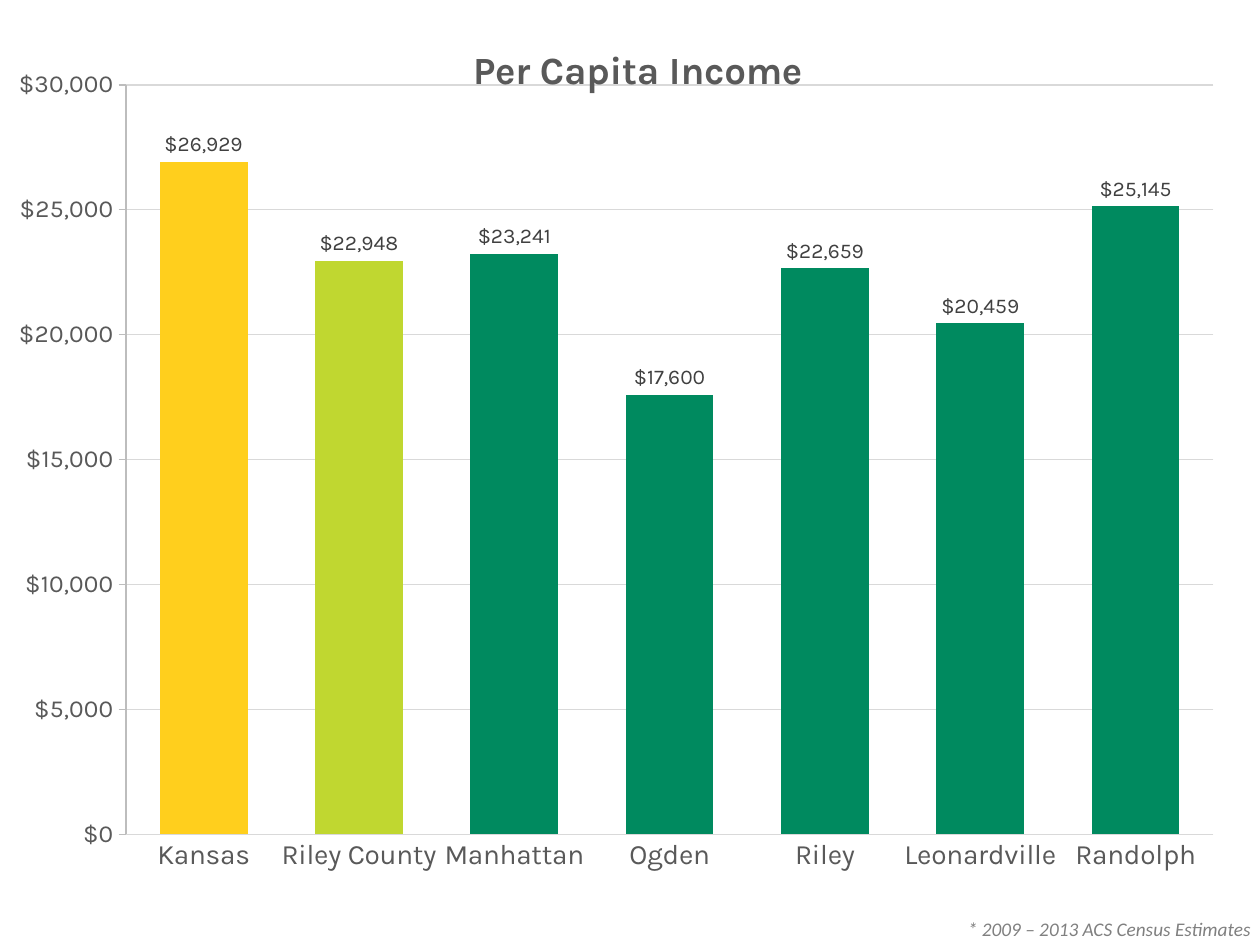
from lxml import etree
from pptx import Presentation
from pptx.chart.data import CategoryChartData
from pptx.dml.color import RGBColor
from pptx.enum.chart import XL_CHART_TYPE, XL_LABEL_POSITION, XL_TICK_MARK
from pptx.enum.text import MSO_ANCHOR, PP_ALIGN
from pptx.oxml.ns import qn
from pptx.util import Inches, Pt

COLUMNS = XL_CHART_TYPE.COLUMN_CLUSTERED
OUTSIDE_END = XL_LABEL_POSITION.OUTSIDE_END
TICK_NONE, TICK_OUT = XL_TICK_MARK.NONE, XL_TICK_MARK.OUTSIDE

YELLOW = RGBColor(0xFF, 0xCF, 0x1D)
LIME = RGBColor(0xC0, 0xD7, 0x30)
GREEN = RGBColor(0x00, 0x8A, 0x5F)
DARK_GREEN = RGBColor(0x06, 0x62, 0x43)
TEXT_GRAY = RGBColor(0x59, 0x59, 0x59)
LABEL_GRAY = RGBColor(0x40, 0x40, 0x40)
NOTE_GRAY = RGBColor(0x80, 0x80, 0x80)
GRID_GRAY = RGBColor(0xD9, 0xD9, 0xD9)
AXIS_GRAY = RGBColor(0xBD, 0xBD, 0xBD)

# Content
TITLE = "Per Capita Income"
INCOMES = [
    ("Kansas", 26929, YELLOW),
    ("Riley County", 22948, LIME),
    ("Manhattan", 23241, GREEN),
    ("Ogden", 17600, GREEN),
    ("Riley", 22659, GREEN),
    ("Leonardville", 20459, GREEN),
    ("Randolph", 25145, GREEN),
]
NOTE = "* 2009 – 2013 ACS Census Estimates"
DOLLARS = '"$"#,##0'

# Formats
TITLE_FONT = dict(name="Karla", size=Pt(22), bold=True, color=TEXT_GRAY)
CATEGORY_FONT = dict(name="Karla", size=Pt(16), color=TEXT_GRAY)
VALUE_FONT = dict(name="Karla", size=Pt(14), color=TEXT_GRAY)
LABEL_FONT = dict(name="Karla", size=Pt(12), color=LABEL_GRAY)
NOTE_FONT = dict(name="Calibri", size=Pt(11), italic=True, color=NOTE_GRAY)

# Shares of the chart's size
TITLE_AT = dict(xMode="edge", yMode="edge", x=0.37, y=0.04)
PLOT_AT = dict(layoutTarget="inner", xMode="edge", yMode="edge",
               x=0.1, y=0.09, w=0.863, h=0.793)


def style(font, formats):
    for key, value in formats.items():
        if key == "color":
            font.color.rgb = value
        else:
            setattr(font, key, value)


def style_line(line, color):
    line.color.rgb = color
    line.width = Pt(0.75)


def place(element, values):
    """Give a chart title or plot area a manual layout."""
    for old in element.findall(qn("c:layout")):
        element.remove(old)
    layout = etree.Element(qn("c:layout"))
    manual = etree.SubElement(layout, qn("c:manualLayout"))
    for tag, value in values.items():
        etree.SubElement(manual, qn("c:" + tag)).set("val", str(value))
    element.insert(0 if element.find(qn("c:tx")) is None else 1, layout)


prs = Presentation()
prs.slide_width, prs.slide_height = Inches(10), Inches(7.5)
s = prs.slides.add_slide(prs.slide_layouts[6])

# Source note
note_w, note_h = Inches(2.42), Inches(0.25)
tf = s.shapes.add_textbox(prs.slide_width - note_w, prs.slide_height - note_h,
                          note_w, note_h).text_frame
tf.word_wrap = True
tf.vertical_anchor = MSO_ANCHOR.MIDDLE
tf.margin_left = tf.margin_top = tf.margin_bottom = 0
tf.margin_right = Inches(0.07)
p = tf.paragraphs[0]
p.alignment = PP_ALIGN.RIGHT
r = p.add_run()
r.text = NOTE
style(r.font, NOTE_FONT)

# Chart over the whole slide
names, values, colors = zip(*INCOMES)
data = CategoryChartData(number_format=DOLLARS)
data.categories = names
data.add_series("Series 1", values)
chart = s.shapes.add_chart(COLUMNS, 0, 0, prs.slide_width, prs.slide_height,
                           data).chart
chart.has_legend = False
style(chart.font, dict(name="Calibri", size=Pt(10)))

# Title
chart.has_title = True
title = chart.chart_title
p = title.text_frame.paragraphs[0]
r = p.add_run()
r.text = TITLE
style(r.font, TITLE_FONT)
place(title._element, TITLE_AT)
place(chart._chartSpace.find(".//" + qn("c:plotArea")), PLOT_AT)

# Axes
for axis, font, tick, color in (
    (chart.category_axis, CATEGORY_FONT, TICK_NONE, GRID_GRAY),
    (chart.value_axis, VALUE_FONT, TICK_OUT, AXIS_GRAY),
):
    style(axis.tick_labels.font, font)
    style_line(axis.format.line, color)
    axis.major_tick_mark, axis.minor_tick_mark = tick, TICK_NONE
axis = chart.value_axis
axis.minimum_scale, axis.maximum_scale, axis.major_unit = 0, 30000, 5000
axis.tick_labels.number_format = DOLLARS
axis.tick_labels.number_format_is_linked = False
style_line(axis.major_gridlines.format.line, GRID_GRAY)

# Columns and their labels
plot = chart.plots[0]
plot.gap_width = 77
plot.vary_by_categories = False
series = plot.series[0]
series.format.fill.solid()
series.format.fill.fore_color.rgb = DARK_GREEN
for i, color in enumerate(colors):
    fill = series.points[i].format.fill
    fill.solid()
    fill.fore_color.rgb = color
labels = series.data_labels
labels.show_value = True
labels.position = OUTSIDE_END
labels.number_format = DOLLARS
labels.number_format_is_linked = False
style(labels.font, LABEL_FONT)

prs.save("out.pptx")
